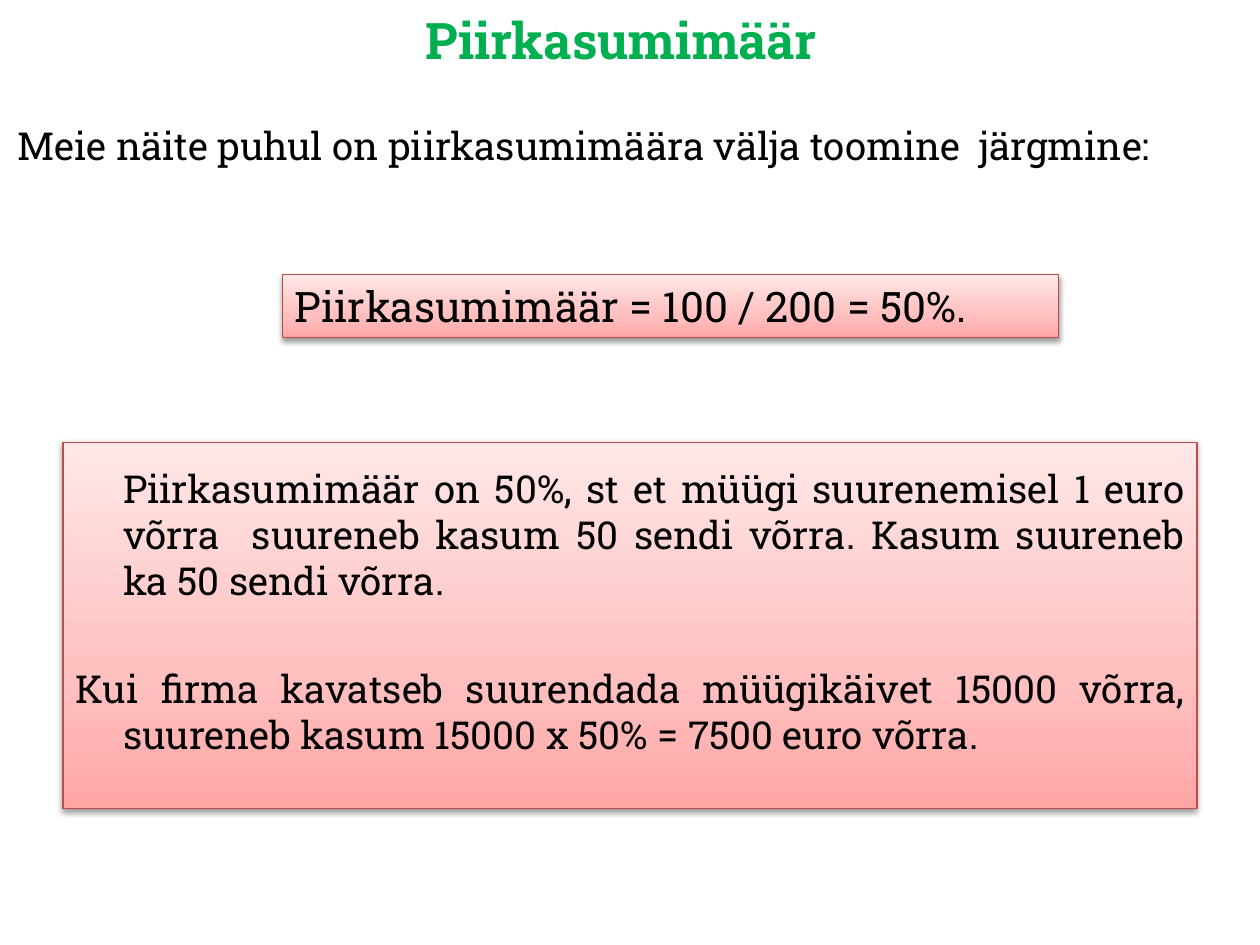
from dataclasses import dataclass

from lxml import etree
from pptx import Presentation
from pptx.dml.color import RGBColor
from pptx.enum.shapes import MSO_SHAPE
from pptx.enum.text import MSO_ANCHOR, MSO_AUTO_SIZE, PP_ALIGN
from pptx.oxml import parse_xml
from pptx.oxml.ns import nsdecls, qn
from pptx.util import Inches, Pt

RECT = MSO_SHAPE.RECTANGLE
TOP, MIDDLE = MSO_ANCHOR.TOP, MSO_ANCHOR.MIDDLE
LEFT, CENTER, JUSTIFY = PP_ALIGN.LEFT, PP_ALIGN.CENTER, PP_ALIGN.JUSTIFY
NO_FIT = MSO_AUTO_SIZE.NONE

FONT = "Roboto Slab"
COLORS = {"title": "00B050", "text": "000000", "line": "BF4C48", "shadow": "000000"}
STOPS = ((0, "FFA6A5"), (35, "FFC0BF"), (100, "FFE7E7"))


@dataclass
class Para:
    text: str
    size: float = 22
    align: PP_ALIGN = LEFT
    color: str = "text"
    bold: bool = False
    margin: float = 0
    hang: float = 0
    before: float = 0


@dataclass
class Panel:
    left: float
    top: float
    width: float
    height: float
    paras: list[Para]
    inset: float = 0.05


INTRO = Para("Meie näite puhul on piirkasumimäära välja toomine  järgmine:")
PANELS = [
    Panel(2.24, 2.18, 6.16, 0.5,
          [Para("Piirkasumimäär = 100 / 200 = 50%.", size=24)]),
    Panel(0.5, 3.51, 9, 2.91, [
        Para("Piirkasumimäär on 50%, st et müügi suurenemisel 1 euro võrra  "
             "suureneb kasum 50 sendi võrra. Kasum suureneb ka 50 sendi võrra.",
             align=JUSTIFY, margin=0.38),
        Para("Kui firma kavatseb suurendada müügikäivet 15000 võrra, "
             "suureneb kasum 15000 x 50% = 7500 euro võrra.",
             align=JUSTIFY, margin=0.38, hang=0.38, before=35),
    ], inset=0.18),
]


def write(frame, paras: list[Para], anchor=TOP) -> None:
    frame.word_wrap = True
    frame.auto_size = NO_FIT
    frame.vertical_anchor = anchor
    for i, item in enumerate(paras):
        para = frame.add_paragraph() if i else frame.paragraphs[0]
        para.alignment = item.align
        para.space_before = Pt(item.before)
        props = para._p.get_or_add_pPr()
        props.set("marL", str(Inches(item.margin)))
        props.set("indent", str(-Inches(item.hang)))
        run = para.add_run()
        run.text = item.text
        font = run.font
        font.name, font.size, font.bold = FONT, Pt(item.size), item.bold
        font.color.rgb = RGBColor.from_string(COLORS[item.color])


def shade(shape) -> None:
    """Give the shape its three-stop gradient and soft drop shadow."""
    shape.fill.gradient()
    shape.fill.gradient_angle = 90
    stops = shape._element.spPr.find(qn("a:gradFill")).find(qn("a:gsLst"))
    for old in list(stops):
        stops.remove(old)
    for pos, color in STOPS:
        stop = etree.SubElement(stops, qn("a:gs"), pos=str(pos * 1000))
        etree.SubElement(stop, qn("a:srgbClr"), val=color)
    shape.shadow.inherit = False
    shape._element.spPr.find(qn("a:effectLst")).append(parse_xml(
        f'<a:outerShdw {nsdecls("a")} blurRad="{Pt(3.1)}" dist="{Pt(1.6)}" '
        f'dir="5400000" rotWithShape="0"><a:srgbClr val="{COLORS["shadow"]}">'
        '<a:alpha val="38000"/></a:srgbClr></a:outerShdw>'))


def draw(slide, panel: Panel) -> None:
    shape = slide.shapes.add_shape(
        RECT, Inches(panel.left), Inches(panel.top),
        Inches(panel.width), Inches(panel.height))
    shade(shape)
    shape.line.color.rgb = RGBColor.from_string(COLORS["line"])
    shape.line.width = Pt(0.75)
    shape.text_frame.margin_top = Inches(panel.inset)
    write(shape.text_frame, panel.paras)


def main() -> None:
    deck = Presentation()
    deck.slide_width, deck.slide_height = Inches(10), Inches(7.5)
    slide = deck.slides.add_slide(deck.slide_layouts[5])
    title = slide.shapes.title
    title.left, title.top = Inches(0.43), Inches(0)
    title.width, title.height = Inches(9), Inches(0.63)
    write(title.text_frame,
          [Para("Piirkasumimäär", 28.8, CENTER, "title", True)], MIDDLE)
    intro = slide.shapes.add_textbox(
        Inches(0.04), Inches(0.92), Inches(9.96), Inches(0.47))
    write(intro.text_frame, [INTRO])
    for panel in PANELS:
        draw(slide, panel)
    deck.save("out.pptx")


if __name__ == "__main__":
    main()
